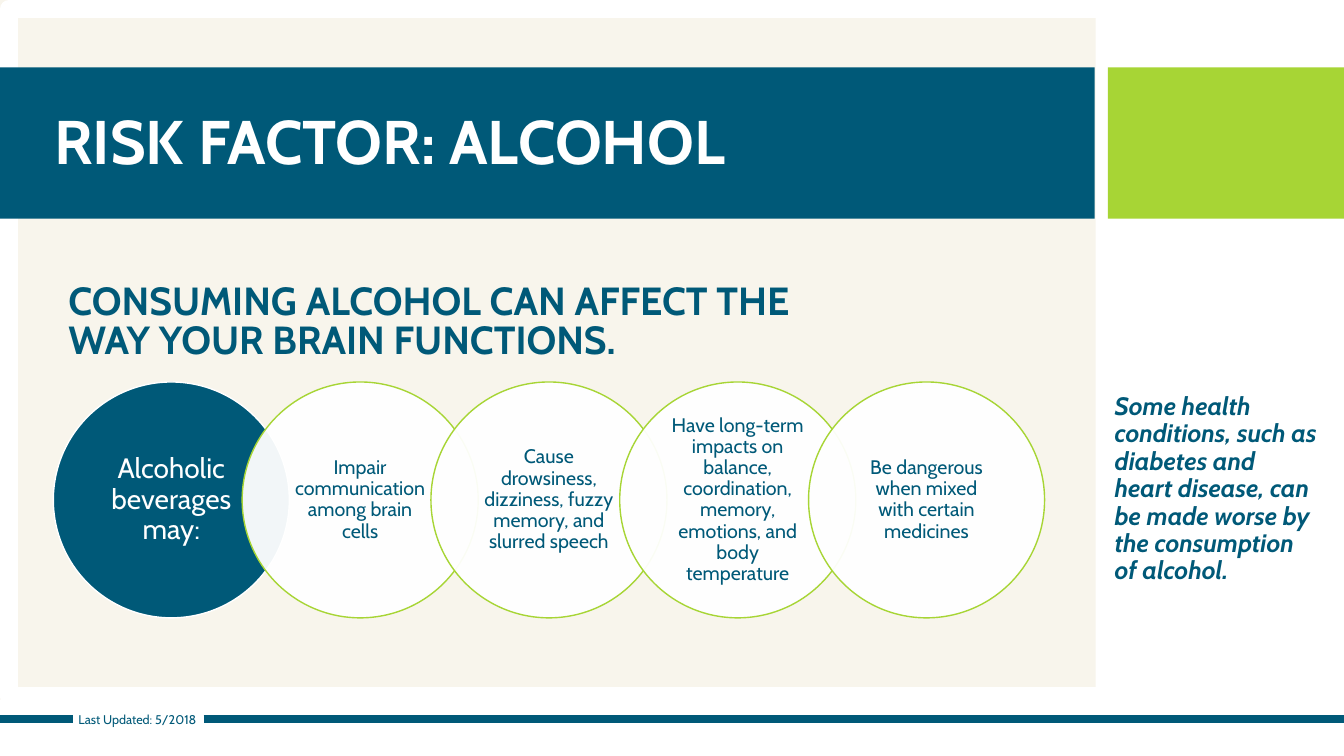
from dataclasses import dataclass

from lxml.etree import SubElement
from pptx import Presentation
from pptx.dml.color import RGBColor
from pptx.enum.shapes import MSO_CONNECTOR, MSO_SHAPE
from pptx.enum.text import MSO_ANCHOR, PP_ALIGN
from pptx.oxml.ns import qn
from pptx.util import Inches, Pt


@dataclass(frozen=True)
class Theme:
    font: str = "Cabin"
    blue: str = "005978"
    green: str = "A7D535"
    white: str = "FFFFFF"
    cream: str = "F8F5EC"
    title: float = 44
    heading: float = 28
    lead: float = 20
    aside: float = 18
    effect: float = 14
    footer: float = 9
    frame_line: float = 13
    rule_line: float = 5.5
    circle_line: float = 1


class Page:
    """Draws on one slide; positions are percentages of its width and height."""

    def __init__(self, deck, theme):
        self.deck, self.theme = deck, theme
        self.slide = deck.slides.add_slide(deck.slide_layouts[6])
        self.slide.background.fill.solid()
        self.slide.background.fill.fore_color.rgb = RGBColor.from_string(theme.cream)

    def across(self, share):
        return round(self.deck.slide_width * share / 100)

    def down(self, share):
        return round(self.deck.slide_height * share / 100)

    def place(self, left, top, width, height):
        return self.across(left), self.down(top), self.across(width), self.down(height)

    def shape(self, area, fill=None, line=None, weight=1, kind=MSO_SHAPE.RECTANGLE, opacity=100):
        shape = self.slide.shapes.add_shape(kind, *self.place(*area))
        shape.shadow.inherit = False
        if fill:
            shape.fill.solid()
            shape.fill.fore_color.rgb = RGBColor.from_string(fill)
            if opacity < 100:
                color = shape._element.spPr.find(qn("a:solidFill"))[0]
                SubElement(color, qn("a:alpha")).set("val", str(opacity * 1000))
        else:
            shape.fill.background()
        if line:
            shape.line.color.rgb = RGBColor.from_string(line)
            shape.line.width = Pt(weight)
        else:
            shape.line.fill.background()
        return shape

    def rule(self, start, end, height):
        y = self.down(height)
        rule = self.slide.shapes.add_connector(
            MSO_CONNECTOR.STRAIGHT, self.across(start), y, self.across(end), y)
        rule.line.color.rgb = RGBColor.from_string(self.theme.blue)
        rule.line.width = Pt(self.theme.rule_line)
        SubElement(rule._element.spPr, qn("a:effectLst"))

    def fill_text(self, frame, lines, size, color, spacing=None, align=PP_ALIGN.LEFT,
                  anchor=MSO_ANCHOR.TOP, bold=False, italic=False):
        frame.word_wrap = True
        frame.vertical_anchor = anchor
        para = frame.paragraphs[0]
        para.alignment = align
        para.line_spacing = spacing
        for index, line in enumerate(lines):
            if index:
                para.add_line_break()
            span = para.add_run()
            span.text = line
            font = span.font
            font.name, font.size = self.theme.font, Pt(size)
            font.bold, font.italic = bold, italic
            font.color.rgb = RGBColor.from_string(color)

    def text(self, area, lines, size, color, **style):
        box = self.slide.shapes.add_textbox(*self.place(*area))
        self.fill_text(box.text_frame, lines, size, color, **style)

    def circle(self, area, words, size, fill, line, color, opacity):
        circle = self.shape(area, fill, line, self.theme.circle_line, MSO_SHAPE.OVAL, opacity)
        frame = circle.text_frame
        frame.margin_left = frame.margin_right = Inches(0.13)
        frame.margin_top = frame.margin_bottom = Inches(0.02)
        self.fill_text(frame, [words], size, color, spacing=0.9,
                       align=PP_ALIGN.CENTER, anchor=MSO_ANCHOR.MIDDLE)


EFFECTS = [
    "Impair communication among brain cells",
    "Cause drowsiness, dizziness, fuzzy memory, and slurred speech",
    "Have long-term impacts on balance, coordination, memory, emotions, and body temperature",
    "Be dangerous when mixed with certain medicines",
]


def main():
    deck = Presentation()
    deck.slide_width, deck.slide_height = Inches(13.33), Inches(7.5)
    theme = Theme()
    page = Page(deck, theme)

    # White margins around the cream panel
    page.shape((81.53, 0, 18.47, 97.47), theme.white)
    page.shape((0, 92.53, 100, 7.47), theme.white)
    page.shape((0.68, 1.2, 98.63, 90.93), line=theme.white, weight=theme.frame_line)

    # Title band
    page.shape((0, 8.93, 81.45, 20), theme.blue)
    page.shape((82.43, 8.93, 17.57, 20), theme.green)
    page.text((3.3, 9.47, 86.25, 19.33), ["RISK FACTOR: ALCOHOL"], theme.title, theme.white,
              spacing=0.9, anchor=MSO_ANCHOR.MIDDLE, bold=True)

    # Footer rule with the date in its gap
    for start, end in ((0, 5.4), (15.15, 100)):
        page.rule(start, end, 95.07)
    page.text((5.1, 93.47, 12, 3.33), ["Last Updated: 5/2018"], theme.footer, theme.blue)

    # Heading
    page.text((4.35, 36.93, 68.4, 11.73),
              ["CONSUMING ALCOHOL CAN AFFECT THE", "WAY YOUR BRAIN FUNCTIONS."],
              theme.heading, theme.blue, spacing=Pt(27.8), bold=True)

    # Chain of circles, each overlapping the one before by a fifth
    lead_style = (theme.lead, theme.blue, theme.white, theme.white, 100)
    effect_style = (theme.effect, theme.white, theme.green, theme.blue, 95)
    chain = [("Alcoholic beverages may:", lead_style)]
    chain += [(effect, effect_style) for effect in EFFECTS]
    diameter = 17.56
    for index, (words, style) in enumerate(chain):
        left = 3.97 + index * 0.8 * diameter
        page.circle((left, 50.53, diameter, 31.2), words, *style)

    # Side remark
    page.text((82.2, 51.33, 16.58, 28.53),
              ["Some health conditions, such as diabetes and heart disease, "
               "can be made worse by the consumption of alcohol."],
              theme.aside, theme.blue, spacing=Pt(19.6), bold=True, italic=True)

    deck.save("out.pptx")


if __name__ == "__main__":
    main()
